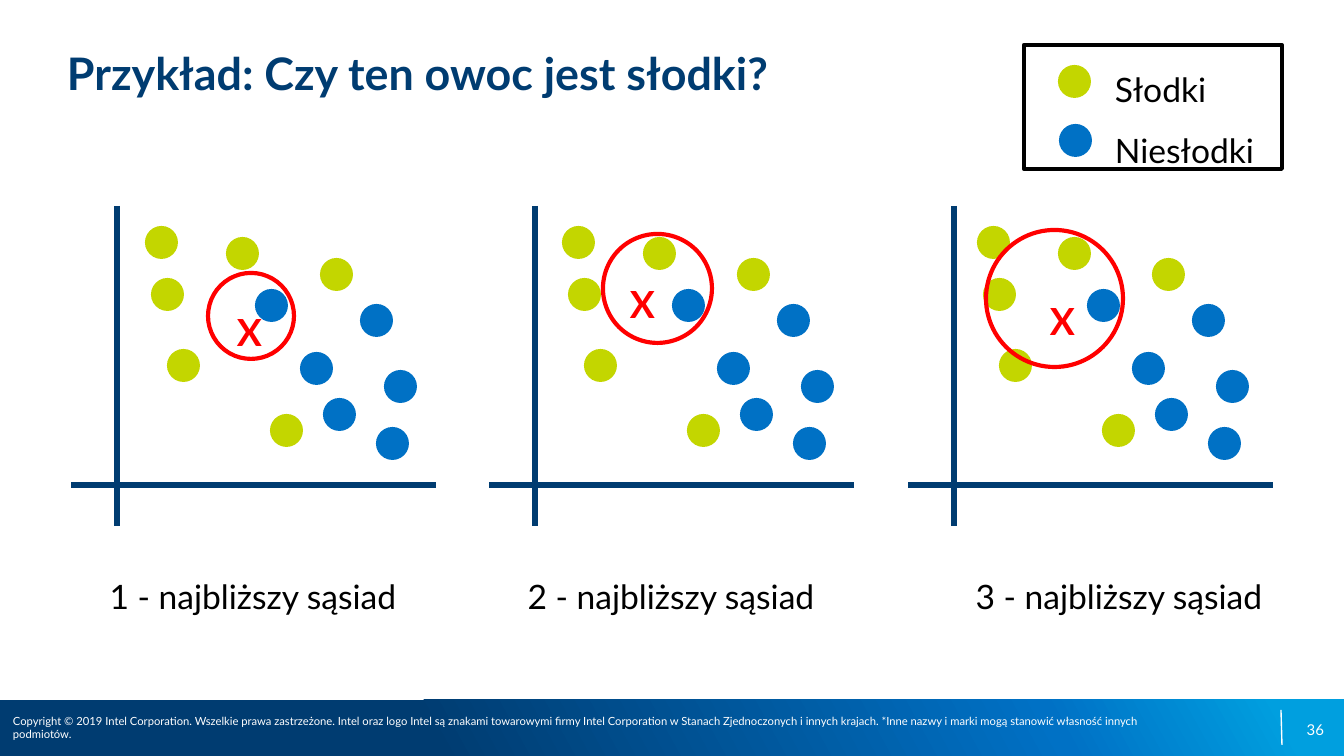
from lxml.etree import SubElement
from pptx import Presentation
from pptx.dml.color import RGBColor
from pptx.enum.shapes import MSO_CONNECTOR, MSO_SHAPE
from pptx.enum.text import MSO_ANCHOR, PP_ALIGN
from pptx.oxml.ns import qn
from pptx.util import Inches, Pt

WIDTH, HEIGHT = 1344, 756
SCALE = Inches(10) / WIDTH

NAVY, BLUE, SKY = "003C71", "0071C5", "009FDF"
LIME, RED, BLACK, WHITE = "C3D600", "FF0000", "000000", "FFFFFF"

DOT = 33
INSET = 13
SWEET = [(145, 226), (226, 237), (151, 278), (320, 258), (270, 414), (167, 349)]
NOT_SWEET = [(376, 427), (360, 304), (323, 398), (384, 370), (300, 352), (255, 289)]

# axis shift, dot shift, X position, ring (left, top, size), caption (left, width)
PANELS = [
    (0, 0, (214, 289), (208, 273, 86), (58, 390)),
    (418, 417, (607, 261), (603, 234, 109), (477, 388)),
    (837, 832, (1027, 278), (986, 230, 137), (894, 450)),
]


def px(length):
    return round(length * SCALE)


def color(value):
    return RGBColor.from_string(value)


class SlideBuilder:
    font = "Lato"

    def __init__(self, slide):
        self.slide = slide

    def shape(self, kind, left, top, width, height, fill=None, line=None, weight=2.25):
        shape = self.slide.shapes.add_shape(
            kind, px(left), px(top), px(width), px(height))
        shape.shadow.inherit = False
        if fill:
            shape.fill.solid()
            shape.fill.fore_color.rgb = color(fill)
        else:
            shape.fill.background()
        if line:
            shape.line.color.rgb = color(line)
            shape.line.width = Pt(weight)
        else:
            shape.line.fill.background()
        return shape

    def circle(self, left, top, size, fill=None, line=None):
        return self.shape(MSO_SHAPE.OVAL, left, top, size, size, fill, line)

    def gradient_bar(self, left, top, width, height, stops, angle):
        """Rectangle with (percent, colour) stops; angle runs clockwise."""
        bar = self.shape(MSO_SHAPE.RECTANGLE, left, top, width, height)
        bar.fill.gradient()
        gradient = bar._element.spPr.find(qn("a:gradFill"))
        stop_list = gradient.find(qn("a:gsLst"))
        for old_stop in list(stop_list):
            stop_list.remove(old_stop)
        for percent, value in stops:
            stop = SubElement(stop_list, qn("a:gs"), pos=str(percent * 1000))
            SubElement(stop, qn("a:srgbClr"), val=value)
        gradient.find(qn("a:lin")).set("ang", str(angle * 60000))

    def line(self, start, end, stroke, weight):
        line = self.slide.shapes.add_connector(
            MSO_CONNECTOR.STRAIGHT, *(px(value) for value in (*start, *end)))
        line.line.color.rgb = color(stroke)
        line.line.width = Pt(weight)
        SubElement(line._element.spPr, qn("a:effectLst"))

    def text(self, left, top, width, height, text, size, ink, bold=False,
             align=PP_ALIGN.LEFT, anchor=MSO_ANCHOR.MIDDLE,
             inset=(INSET, INSET), spacing=None):
        box = self.slide.shapes.add_textbox(px(left), px(top), px(width), px(height))
        frame = box.text_frame
        frame.word_wrap = True
        frame.vertical_anchor = anchor
        frame.margin_left = frame.margin_right = px(inset[0])
        frame.margin_top = frame.margin_bottom = px(inset[1])
        frame.text = text
        for para in frame.paragraphs:
            para.alignment = align
            if spacing:
                para.line_spacing = spacing
            for span in para.runs:
                span.font.name = self.font
                span.font.size = Pt(size)
                span.font.bold = bold
                span.font.color.rgb = color(ink)


def add_footer(page):
    page.gradient_bar(0, 700, WIDTH, HEIGHT - 700,
                      [(32, NAVY), (78, BLUE), (95, SKY)], 331)
    page.line((1281, 710), (1282, 745), WHITE, 0.75)
    page.text(1011, 710, 313, 40, "36", 8, WHITE,
              align=PP_ALIGN.RIGHT, inset=(0, 0))
    page.text(0, 714, 1191, 27,
              "Copyright © 2019 Intel Corporation. Wszelkie prawa zastrzeżone. "
              "Intel oraz logo Intel są znakami towarowymi firmy Intel Corporation "
              "w Stanach Zjednoczonych i innych krajach. *Inne nazwy i marki mogą "
              "stanowić własność innych podmiotów.", 6, WHITE, inset=(INSET, 6))


def add_legend(page):
    page.shape(MSO_SHAPE.RECTANGLE, 1024, 45, 258, 124, WHITE, BLACK)
    page.circle(1058, 65, DOT, LIME)
    page.circle(1059, 124, DOT, BLUE)
    page.text(1102, 36, 242, 144, "Słodki\nNiesłodki", 18, BLACK,
              anchor=MSO_ANCHOR.TOP, spacing=1.5)


def add_panel(page, number, axis_shift, dot_shift, mark, ring, caption):
    page.line((117 + axis_shift, 206), (117 + axis_shift, 526), NAVY, 3)
    page.line((436 + axis_shift, 485), (71 + axis_shift, 485), NAVY, 3)
    page.text(*mark, 71, 86, "X", 20, RED, bold=True, align=PP_ALIGN.CENTER)
    for dots, fill in ((SWEET, LIME), (NOT_SWEET, BLUE)):
        for left, top in dots:
            page.circle(left + dot_shift, top, DOT, fill)
    page.circle(*ring, line=RED)
    left, width = caption
    page.text(left, 540, width, 93, f"{number} - najbliższy sąsiad", 18, BLACK,
              align=PP_ALIGN.CENTER, spacing=1.5)


def main():
    deck = Presentation()
    deck.slide_width, deck.slide_height = px(WIDTH), px(HEIGHT)
    page = SlideBuilder(deck.slides.add_slide(deck.slide_layouts[6]))
    add_footer(page)
    page.text(67, 46, 900, 128, "Przykład: Czy ten owoc jest słodki?", 24, NAVY,
              bold=True, anchor=MSO_ANCHOR.TOP, inset=(0, 0))
    add_legend(page)
    for number, panel in enumerate(PANELS, start=1):
        add_panel(page, number, *panel)
    deck.save("out.pptx")


if __name__ == "__main__":
    main()
